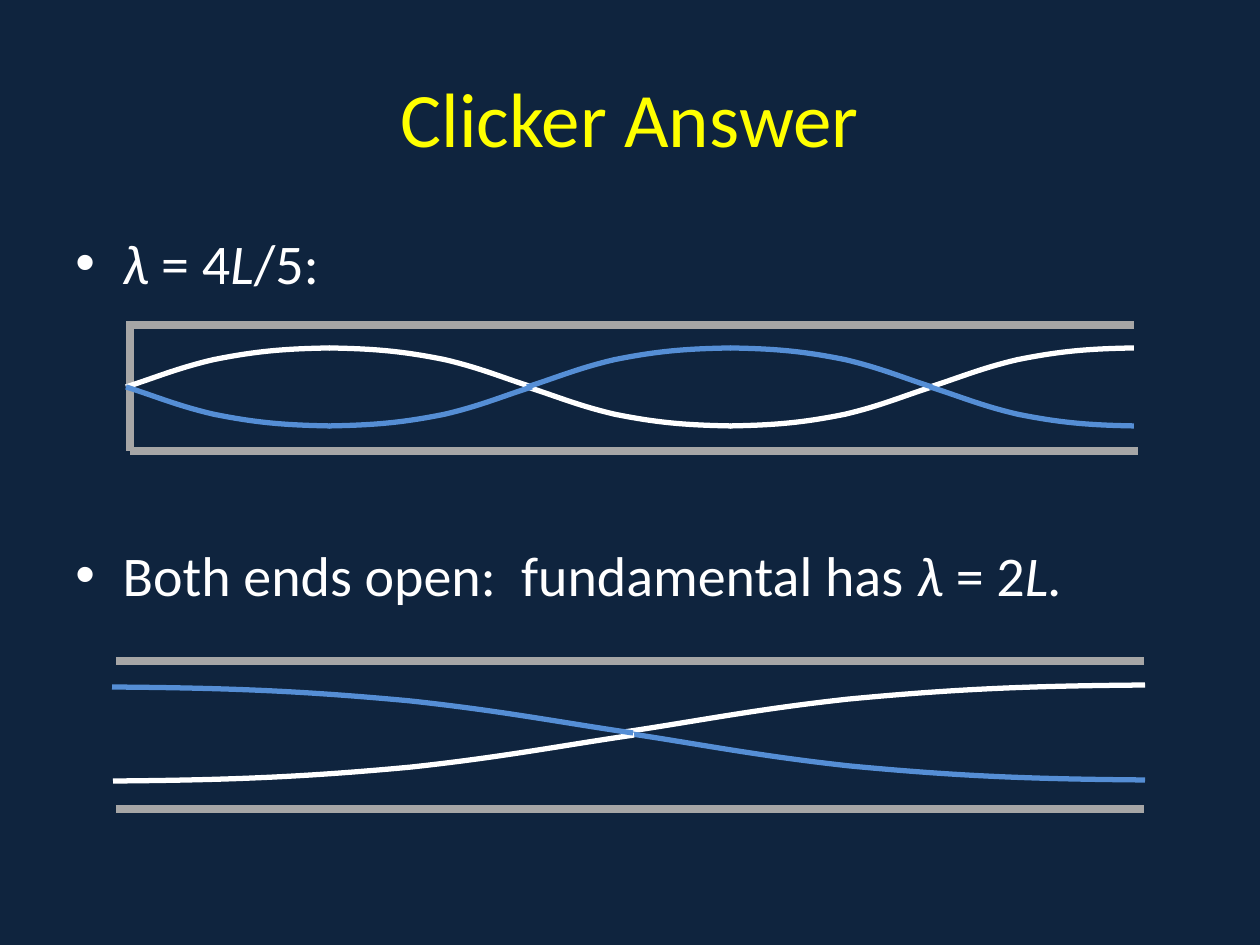
from dataclasses import dataclass

from lxml.etree import SubElement
from pptx import Presentation
from pptx.dml.color import RGBColor
from pptx.enum.shapes import MSO_CONNECTOR
from pptx.enum.text import MSO_ANCHOR, PP_ALIGN
from pptx.oxml.ns import qn
from pptx.util import Pt


@dataclass(frozen=True)
class Theme:
    font: str = "Calibri"
    background: RGBColor = RGBColor(0x0F, 0x24, 0x3E)
    title: RGBColor = RGBColor(0xFF, 0xFF, 0x00)
    white: RGBColor = RGBColor(0xFF, 0xFF, 0xFF)
    blue: RGBColor = RGBColor(0x55, 0x8E, 0xD5)
    tube: RGBColor = RGBColor(0xA6, 0xA6, 0xA6)
    title_size: int = 44
    body_size: int = 32
    tube_width: float = 4.5
    wave_width: int = 3


theme = Theme()
PX = 914400 / 126  # EMU per px

# Control points of a quarter wave, from node (0, 0) to antinode (1, 1)
QUARTER = [(0.14, 0.23), (0.25, 0.48), (0.43, 0.7),
           (0.64, 0.92), (0.78, 0.98), (1, 1)]


def add_wall(shapes, x1, y1, x2, y2):
    ends = [int(v * PX) for v in (x1, y1, x2, y2)]
    wall = shapes.add_connector(MSO_CONNECTOR.STRAIGHT, *ends)
    wall.line.color.rgb = theme.tube
    wall.line.width = Pt(theme.tube_width)
    SubElement(wall.line._get_or_add_ln().getparent(), qn("a:effectLst"))


def add_quarter_wave(shapes, node, antinode, color):
    (x0, y0), (x1, y1) = node, antinode
    points = [(int((x0 + (x1 - x0) * u) * PX), int((y0 + (y1 - y0) * v) * PX))
              for u, v in QUARTER]
    builder = shapes.build_freeform(int(x0 * PX), int(y0 * PX))
    builder.add_line_segments(points, close=False)
    wave = builder.convert_to_shape()
    # Turn each three line segments into one Bézier segment
    segments = wave.element.xpath(".//a:lnTo")
    for first in range(0, len(segments), 3):
        curve = SubElement(segments[first].getparent(), qn("a:cubicBezTo"))
        for segment in segments[first:first + 3]:
            curve.append(segment[0])
            segment.getparent().remove(segment)
    wave.fill.background()
    wave.line.color.rgb = color
    wave.line.width = Pt(theme.wave_width)
    wave.shadow.inherit = False


deck = Presentation()
deck.slide_width, deck.slide_height = int(1260 * PX), int(945 * PX)
page = deck.slides.add_slide(deck.slide_layouts[5])
page.background.fill.solid()
page.background.fill.fore_color.rgb = theme.background

# Title
title = page.shapes.title
title.left, title.top, title.width, title.height = (
    int(v * PX) for v in (63, 38, 1134, 157))
title.text_frame.text = "Clicker Answer"
title.text_frame.vertical_anchor = MSO_ANCHOR.MIDDLE
para = title.text_frame.paragraphs[0]
para.alignment = PP_ALIGN.CENTER
font = para.runs[0].font
font.name, font.size = theme.font, Pt(theme.title_size)
font.color.rgb = theme.title

# Bulleted statements: (space before in points, [(text, italic)])
statements = [
    (0, [("λ", True), (" = 4", False), ("L", True), ("/5:", False)]),
    (140, [("Both ends open:  fundamental has ", False), ("λ", True),
           (" = 2", False), ("L.", True)]),
]
box = page.shapes.add_textbox(*(int(v * PX) for v in (63, 222, 1134, 588)))
frame = box.text_frame
frame.word_wrap = True
for number, (space, pieces) in enumerate(statements):
    para = frame.add_paragraph() if number else frame.paragraphs[0]
    para.space_before = Pt(space)
    props = para._p.get_or_add_pPr()
    props.set("marL", "342900")
    props.set("indent", "-342900")
    SubElement(props, qn("a:buFont")).set("typeface", "Arial")
    SubElement(props, qn("a:buChar")).set("char", "•")
    for text, italic in pieces:
        span = para.add_run()
        span.text = text
        span.font.name, span.font.size = theme.font, Pt(theme.body_size)
        span.font.italic = italic
        span.font.color.rgb = theme.white

# Tube closed at the left: five quarter waves
closed_tube = page.shapes.add_group_shape().shapes
for wall in [(126, 325, 1134, 325), (130, 325, 130, 451), (130, 451, 1138, 451)]:
    add_wall(closed_tube, *wall)
axis, amplitude = 387, 39
quarters = [(126, 330, -1), (532, 329, -1), (527, 731, 1),
            (932, 730, 1), (930, 1134, -1)]
for color, phase in [(theme.white, 1), (theme.blue, -1)]:
    for node_x, antinode_x, side in quarters:
        add_quarter_wave(closed_tube, (node_x, axis),
                         (antinode_x, axis + side * phase * amplitude), color)

# Tube open at both ends: half a wave
for y in (661, 809):
    add_wall(page.shapes, 116, y, 1144, y)
open_waves = page.shapes.add_group_shape().shapes
for node, antinode, color in [
    ((624, 732), (1145, 685), theme.white),
    ((625, 733), (1145, 780), theme.blue),
    ((634, 735), (113, 781), theme.white),
    ((633, 733), (112, 687), theme.blue),
]:
    add_quarter_wave(open_waves, node, antinode, color)

deck.save("out.pptx")
